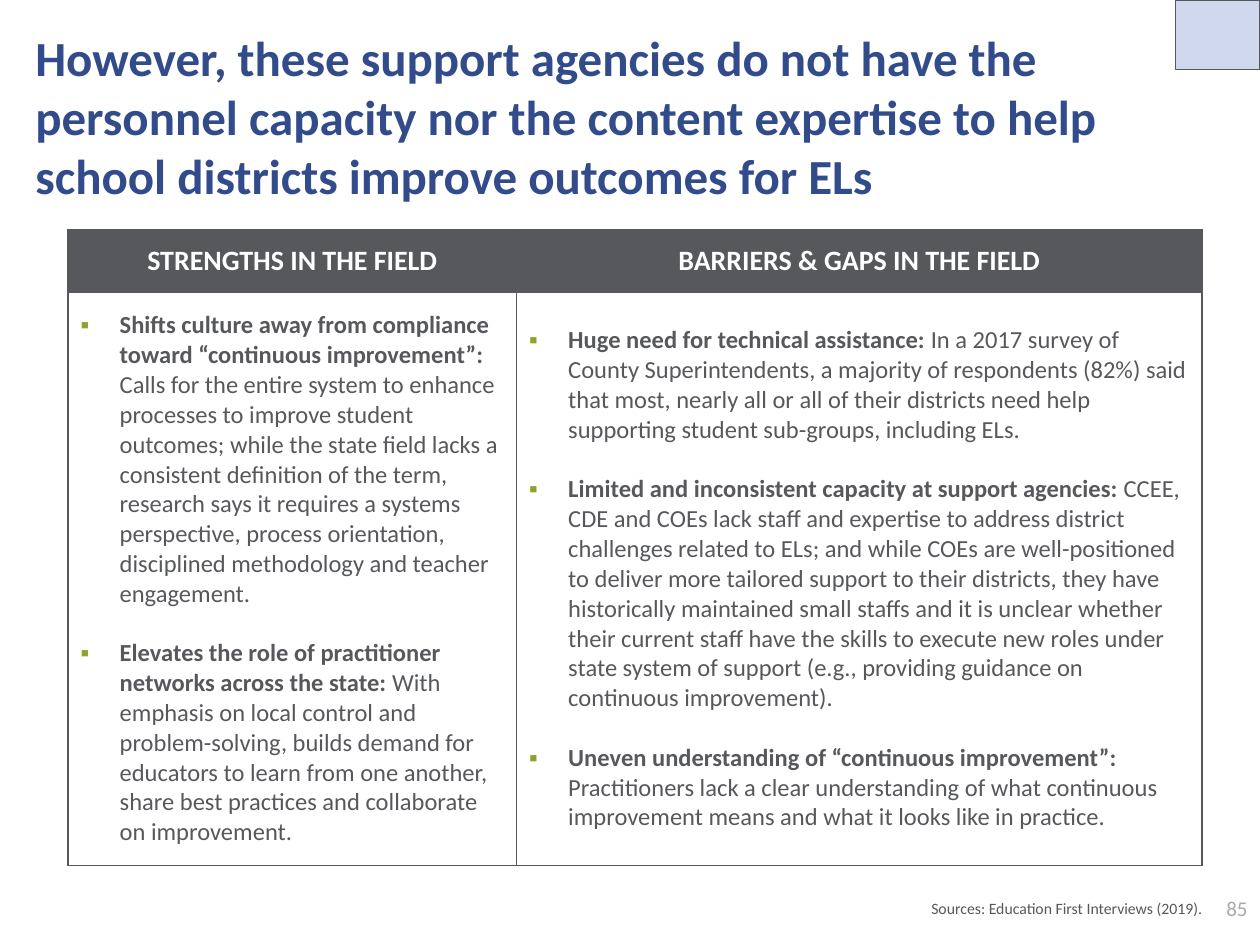
from lxml.etree import SubElement
from pptx import Presentation
from pptx.dml.color import RGBColor
from pptx.enum.shapes import MSO_SHAPE
from pptx.enum.text import MSO_ANCHOR, MSO_AUTO_SIZE, PP_ALIGN
from pptx.oxml.ns import qn
from pptx.util import Inches, Pt

NAVY = RGBColor(0x32, 0x4B, 0x8B)
GRAY = RGBColor(0x56, 0x58, 0x5C)
LIGHT_GRAY = RGBColor(0xA9, 0xA9, 0xA9)
PALE_BLUE = RGBColor(0xD0, 0xD8, 0xEE)
GREEN = RGBColor(0x91, 0xA2, 0x26)
WHITE = RGBColor(0xFF, 0xFF, 0xFF)

TITLE = ("However, these support agencies do not have the personnel capacity "
         "nor the content expertise to help school districts improve outcomes for ELs")

# Each column: heading, then (bold lead, explanation) points
COLUMNS = [
    ("STRENGTHS IN THE FIELD", [
        ("Shifts culture away from compliance toward “continuous improvement”: ",
         "Calls for the entire system to enhance processes to improve student outcomes; "
         "while the state field lacks a consistent definition of the term, research says "
         "it requires a systems perspective, process orientation, disciplined methodology "
         "and teacher engagement."),
        ("Elevates the role of practitioner networks across the state: ",
         "With emphasis on local control and problem-solving, builds demand for educators "
         "to learn from one another, share best practices and collaborate on improvement."),
    ]),
    ("BARRIERS & GAPS IN THE FIELD", [
        ("Huge need for technical assistance: ",
         "In a 2017 survey of County Superintendents, a majority of respondents (82%) said "
         "that most, nearly all or all of their districts need help supporting student "
         "sub-groups, including ELs."),
        ("Limited and inconsistent capacity at support agencies: ",
         "CCEE, CDE and COEs lack staff and expertise to address district challenges related "
         "to ELs; and while COEs are well-positioned to deliver more tailored support to "
         "their districts, they have historically maintained small staffs and it is unclear "
         "whether their current staff have the skills to execute new roles under state "
         "system of support (e.g., providing guidance on continuous improvement)."),
        ("Uneven understanding of “continuous improvement”: ",
         "Practitioners lack a clear understanding of what continuous improvement means "
         "and what it looks like in practice."),
    ]),
]


class SlideBuilder:
    font_name = "Calibri"
    indent = Inches(0.31)
    point_gap = Pt(17)

    def __init__(self, slide):
        self.slide = slide

    def add_run(self, paragraph, text, size, color, bold=False):
        run = paragraph.add_run()
        run.text = text
        values = {"name": self.font_name, "size": Pt(size), "bold": bold}
        for name, value in values.items():
            setattr(run.font, name, value)
        run.font.color.rgb = color

    def format_frame(self, frame, margin_x=0, margin_y=0, anchor=MSO_ANCHOR.TOP):
        values = {"word_wrap": True, "auto_size": MSO_AUTO_SIZE.NONE,
                  "vertical_anchor": anchor,
                  "margin_left": margin_x, "margin_right": margin_x,
                  "margin_top": margin_y, "margin_bottom": margin_y}
        for name, value in values.items():
            setattr(frame, name, value)

    def title(self, text, left, top, width, height):
        shape = self.slide.shapes.title
        place = {"left": left, "top": top, "width": width, "height": height}
        for name, value in place.items():
            setattr(shape, name, Inches(value))
        self.format_frame(shape.text_frame)
        paragraph = shape.text_frame.paragraphs[0]
        paragraph.alignment = PP_ALIGN.LEFT
        self.add_run(paragraph, text, 28, NAVY, bold=True)

    def right_text(self, text, box, size, color, **frame_format):
        frame = self.slide.shapes.add_textbox(*map(Inches, box)).text_frame
        self.format_frame(frame, **frame_format)
        paragraph = frame.paragraphs[0]
        paragraph.alignment = PP_ALIGN.RIGHT
        self.add_run(paragraph, text, size, color)

    def rectangle(self, box, fill, line):
        shape = self.slide.shapes.add_shape(MSO_SHAPE.RECTANGLE, *map(Inches, box))
        shape.shadow.inherit = False
        shape.fill.solid()
        shape.fill.fore_color.rgb = fill
        shape.line.color.rgb = line
        shape.line.width = Pt(0.75)

    def bullet(self, paragraph):
        properties = paragraph._p.get_or_add_pPr()
        properties.set("marL", str(self.indent))
        properties.set("indent", str(-self.indent))
        color = SubElement(properties, qn("a:buClr"))
        SubElement(color, qn("a:srgbClr"), val=str(GREEN))
        SubElement(properties, qn("a:buFont"), typeface=self.font_name)
        SubElement(properties, qn("a:buChar"), char="▪")

    def format_cell(self, cell, fill):
        properties = cell._tc.get_or_add_tcPr()
        for side in ("lnL", "lnR", "lnT", "lnB"):
            line = SubElement(properties, qn(f"a:{side}"), w=str(Pt(1)))
            SubElement(SubElement(line, qn("a:solidFill")), qn("a:srgbClr"), val=str(GRAY))
        cell.fill.solid()
        cell.fill.fore_color.rgb = fill
        cell.vertical_anchor = MSO_ANCHOR.MIDDLE

    def table(self, columns, box, widths, heights):
        table = self.slide.shapes.add_table(2, len(columns), *map(Inches, box)).table
        for row, height in zip(table.rows, heights):
            row.height = Inches(height)
        for index, (heading, points) in enumerate(columns):
            table.columns[index].width = Inches(widths[index])
            # Heading
            cell = table.cell(0, index)
            self.format_cell(cell, GRAY)
            paragraph = cell.text_frame.paragraphs[0]
            paragraph.alignment = PP_ALIGN.CENTER
            self.add_run(paragraph, heading, 16, WHITE, bold=True)
            # Points
            cell = table.cell(1, index)
            self.format_cell(cell, WHITE)
            frame = cell.text_frame
            for number, (lead, explanation) in enumerate(points):
                paragraph = frame.add_paragraph() if number else frame.paragraphs[0]
                self.bullet(paragraph)
                if number:
                    paragraph.space_before = self.point_gap
                self.add_run(paragraph, lead, 14, GRAY, bold=True)
                self.add_run(paragraph, explanation, 14, GRAY)


def main():
    presentation = Presentation()
    presentation.slide_width = Inches(10)
    presentation.slide_height = Inches(7.5)
    builder = SlideBuilder(presentation.slides.add_slide(presentation.slide_layouts[5]))

    builder.title(TITLE, 0.28, 0.22, 9.52, 1.52)
    builder.table(COLUMNS, (0.54, 1.82, 9, 5.05), widths=(3.56, 5.44), heights=(0.5, 4.55))

    # Page number, corner block and source line
    builder.right_text("85", (9.33, 7.06, 0.67, 0.3), 12, LIGHT_GRAY,
                       margin_x=Inches(0.1), margin_y=Inches(0.05))
    builder.rectangle((9.33, 0, 0.67, 0.55), PALE_BLUE, GRAY)
    builder.right_text("Sources: Education First Interviews (2019).",
                       (0.38, 7.09, 9.16, 0.23), 9, GRAY, anchor=MSO_ANCHOR.MIDDLE)

    presentation.save("out.pptx")


if __name__ == "__main__":
    main()
